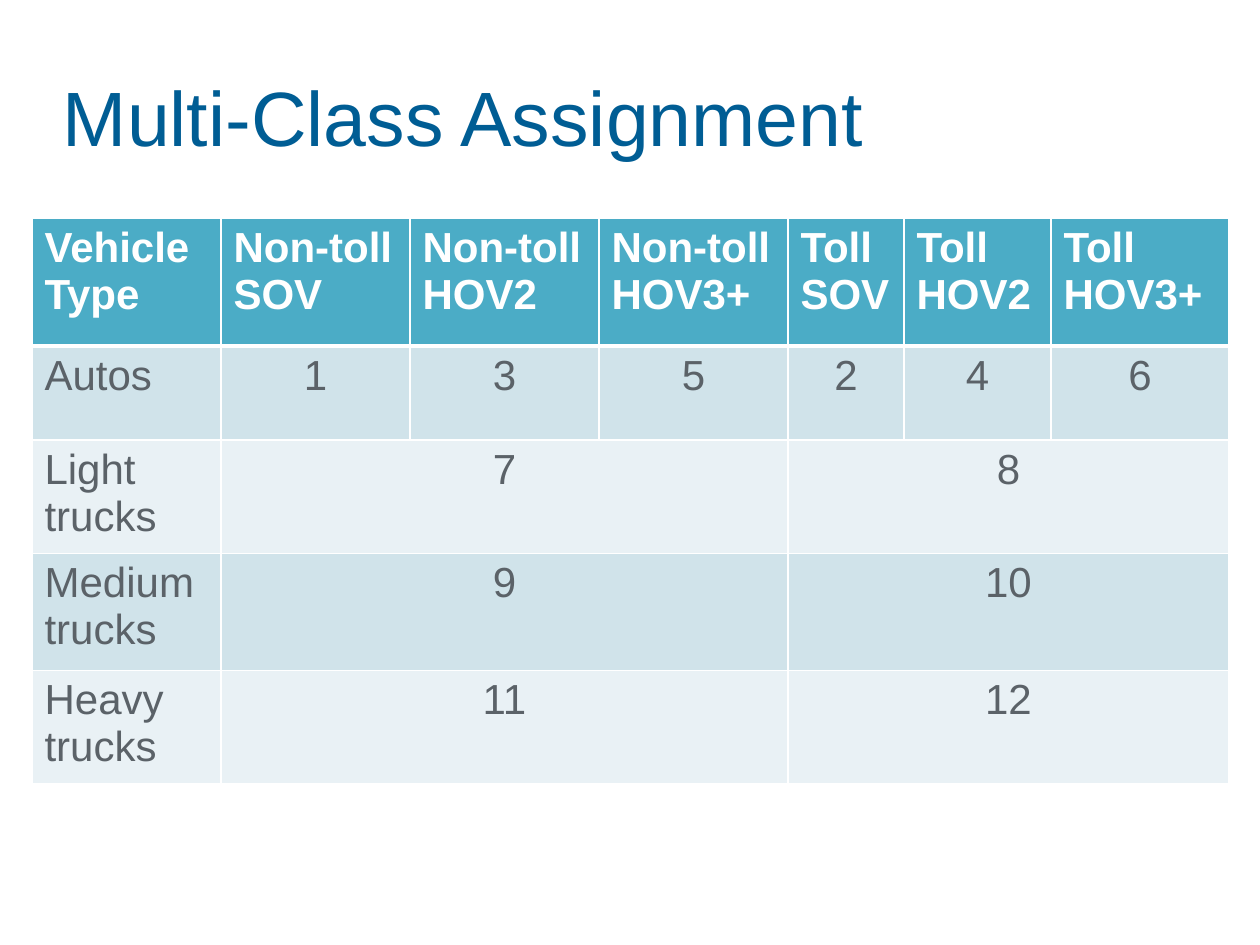
"""Build the Multi-Class Assignment slide with its vehicle class table."""
from lxml import etree
from pptx import Presentation
from pptx.dml.color import RGBColor
from pptx.enum.text import MSO_ANCHOR, PP_ALIGN
from pptx.oxml.ns import qn
from pptx.util import Emu, Pt

TOP = MSO_ANCHOR.TOP
LEFT, CENTER = PP_ALIGN.LEFT, PP_ALIGN.CENTER
SCALE = 914400 / 126
COLORS = {
    "title": "005D94",
    "header": "4BACC6",
    "band": "D0E3EA",
    "light": "E9F1F5",
    "text": "5B6268",
    "white": "FFFFFF",
}
COLS = [189, 189, 189, 189, 116, 147, 178]
ROWS = [128, 94, 93, 117, 93]
DATA = [
    ["Vehicle Type", "Non-toll SOV", "Non-toll HOV2", "Non-toll HOV3+",
     "Toll SOV", "Toll HOV2", "Toll HOV3+"],
    ["Autos", "1", "3", "5", "2", "4", "6"],
    ["Light trucks", "7", "", "", "8", "", ""],
    ["Medium trucks", "9", "", "", "10", "", ""],
    ["Heavy trucks", "11", "", "", "12", "", ""],
]


def px(n):
    return Emu(round(n * SCALE))


def set_font(p, size, color):
    p.font.name = "Arial"
    p.font.size = Pt(size)
    p.font.color.rgb = RGBColor.from_string(COLORS[color])


prs = Presentation()
prs.slide_width, prs.slide_height = px(1260), px(945)
s = prs.slides.add_slide(prs.slide_layouts[6])

title = s.shapes.add_textbox(px(63), px(63), px(1134), px(132))
tf = title.text_frame
tf.word_wrap = True
tf.vertical_anchor = TOP
tf.margin_left = tf.margin_right = tf.margin_bottom = 0
tf.margin_top = px(7)
p = tf.paragraphs[0]
p.text = "Multi-Class Assignment"
set_font(p, 44, "title")

table = s.shapes.add_table(
    len(ROWS), len(COLS), px(32), px(218), px(sum(COLS)), px(sum(ROWS))).table
table.horz_banding = False
for col, width in zip(table.columns, COLS):
    col.width = px(width)
for row, height in zip(table.rows, ROWS):
    row.height = px(height)

for i, values in enumerate(DATA):
    fill = "header" if i == 0 else "band" if i % 2 else "light"
    for j, value in enumerate(values):
        cell = table.cell(i, j)
        tcPr = cell._tc.get_or_add_tcPr()
        for side in "LRTB":
            thick = (i, side) in [(0, "B"), (1, "T")]
            ln = etree.SubElement(tcPr, qn("a:ln" + side), w=str(Pt(3 if thick else 1)))
            solid = etree.SubElement(ln, qn("a:solidFill"))
            etree.SubElement(solid, qn("a:srgbClr"), val=COLORS["white"])
        cell.fill.solid()
        cell.fill.fore_color.rgb = RGBColor.from_string(COLORS[fill])
        p = cell.text_frame.paragraphs[0]
        p.text = value
        p.alignment = CENTER if i and j else LEFT
        set_font(p, 24, "text" if i else "white")
        p.font.bold = i == 0

for i in range(2, len(ROWS)):
    for j in (1, 4):
        table.cell(i, j).merge(table.cell(i, j + 2))

prs.save("out.pptx")
